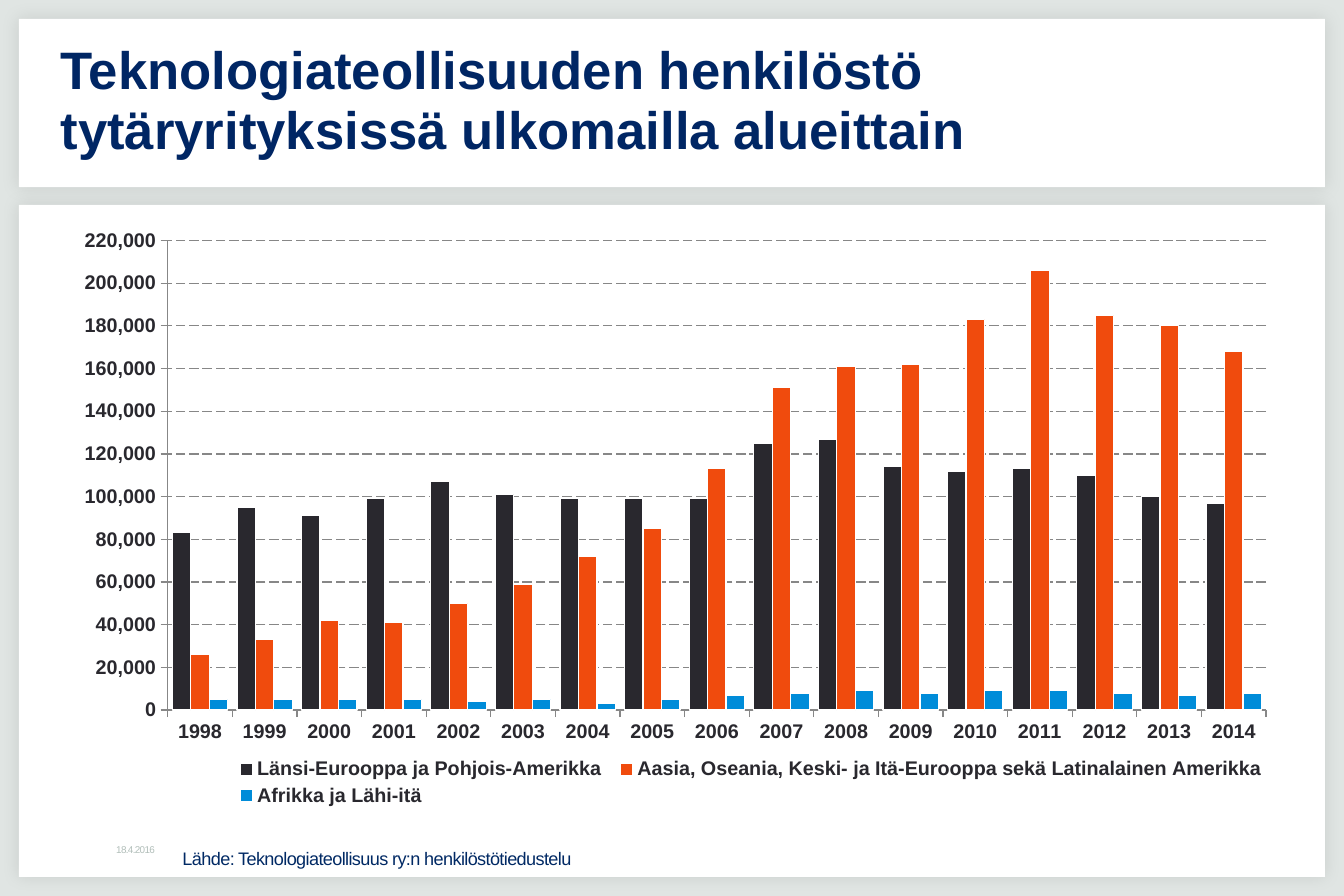
from lxml import etree
from pptx import Presentation
from pptx.chart.data import CategoryChartData
from pptx.dml.color import RGBColor
from pptx.enum.chart import XL_CHART_TYPE as ChartType, XL_LEGEND_POSITION as LegendPosition
from pptx.enum.chart import XL_TICK_MARK as TickMark
from pptx.enum.dml import MSO_LINE
from pptx.enum.shapes import MSO_SHAPE
from pptx.enum.text import MSO_ANCHOR, PP_ALIGN
from pptx.oxml import parse_xml
from pptx.oxml.ns import nsdecls, qn
from pptx.util import Inches, Pt

WIDTH, HEIGHT = 11.34, 7.56
MARGIN = 0.16
HEADER_BOX = (MARGIN, MARGIN, WIDTH - 2 * MARGIN, 1.42)
CONTENT_BOX = (MARGIN, 1.73, WIDTH - 2 * MARGIN, 5.67)
FONT = "Arial"
COLORS = {
    "background": "E0E5E3", "panel": "FFFFFF", "title": "002664", "source": "002964",
    "date": "B1BEB9", "text": "29282E", "line": "878787",
    "west": "29282E", "growth": "F04B0D", "africa": "008CD9",
}
YEARS = [str(year) for year in range(1998, 2015)]
# Personnel in thousands
REGIONS = [
    ("Länsi-Eurooppa ja Pohjois-Amerikka", "west",
     [83, 95, 91, 99, 107, 101, 99, 99, 99, 125, 127, 114, 112, 113, 110, 100, 97]),
    ("Aasia, Oseania, Keski- ja Itä-Eurooppa sekä Latinalainen Amerikka", "growth",
     [26, 33, 42, 41, 50, 59, 72, 85, 113, 151, 161, 162, 183, 206, 185, 180, 168]),
    ("Afrikka ja Lähi-itä", "africa",
     [5, 5, 5, 5, 4, 5, 3, 5, 7, 8, 9, 8, 9, 9, 8, 7, 8]),
]
PLOT_LAYOUT = (0.091, 0.028, 0.892, 0.799)
LEGEND_LAYOUT = (0.14, 0.9, 0.85, 0.12)


def color(name):
    return RGBColor.from_string(COLORS[name])


def inches(*lengths):
    return [Inches(length) for length in lengths]


def set_font(font, size, color_name, bold=False):
    font.name, font.size, font.bold = FONT, Pt(size), bold
    font.color.rgb = color(color_name)


def set_line(line, color_name):
    line.width = Pt(0.75)
    line.color.rgb = color(color_name)


def add_panel(slide, box):
    """Draw a white panel with a soft, even shadow."""
    panel = slide.shapes.add_shape(MSO_SHAPE.RECTANGLE, *inches(*box))
    panel.fill.solid()
    panel.fill.fore_color.rgb = color("panel")
    panel.line.fill.background()
    panel.shadow.inherit = False
    effects = panel._element.spPr.find(qn("a:effectLst"))
    effects.append(parse_xml(
        f'<a:outerShdw {nsdecls("a")} blurRad="{Pt(10)}" dist="0" dir="2700000">'
        '<a:srgbClr val="000000"><a:alpha val="10000"/></a:srgbClr></a:outerShdw>'))


def set_margins(frame, left, top, right, bottom):
    frame.margin_left, frame.margin_top, frame.margin_right, frame.margin_bottom = inches(
        left, top, right, bottom)


def add_header(slide, box):
    left, top, width, height = box
    add_panel(slide, box)
    title = slide.shapes.title
    title.left, title.top, title.width, title.height = inches(
        left + 0.31, top + 0.15, width - 0.62, height - 0.32)
    slide.shapes._spTree.append(title._element)
    frame = title.text_frame
    frame.text = "Teknologiateollisuuden henkilöstö tytäryrityksissä ulkomailla alueittain"
    frame.vertical_anchor = MSO_ANCHOR.MIDDLE
    set_margins(frame, 0.04, 0.05, 0.1, 0.05)
    paragraph = frame.paragraphs[0]
    paragraph.alignment = PP_ALIGN.LEFT
    paragraph.line_spacing = 0.95
    set_font(paragraph.font, 32, "title", bold=True)


def set_layout(element, shares, inner=False):
    """Fix the place of a plot area or legend as shares of the chart."""
    for layout in element.findall(qn("c:layout")):
        element.remove(layout)
    layout = etree.Element(qn("c:layout"))
    manual = etree.SubElement(layout, qn("c:manualLayout"))
    settings = [("layoutTarget", "inner")] if inner else []
    settings += [("xMode", "edge"), ("yMode", "edge"), *zip("xywh", shares)]
    for tag, value in settings:
        etree.SubElement(manual, qn(f"c:{tag}")).set("val", str(value))
    position = element.find(qn("c:legendPos"))
    if position is None:
        element.insert(0, layout)
    else:
        position.addnext(layout)


def format_axes(chart):
    for axis in (chart.category_axis, chart.value_axis):
        axis.major_tick_mark = TickMark.OUTSIDE
        axis.minor_tick_mark = TickMark.NONE
        set_line(axis.format.line, "line")
        set_font(axis.tick_labels.font, 12, "text", bold=True)
    values = chart.value_axis
    values.minimum_scale, values.maximum_scale, values.major_unit = 0, 220000, 20000
    values.tick_labels.number_format = "#,##0"
    values.tick_labels.number_format_is_linked = False
    values.has_major_gridlines = True
    gridline = values.major_gridlines.format.line
    set_line(gridline, "line")
    gridline.dash_style = MSO_LINE.LONG_DASH


def add_personnel_chart(slide, box):
    data = CategoryChartData(number_format="#,##0")
    data.categories = YEARS
    for name, _, thousands in REGIONS:
        data.add_series(name, [value * 1000 for value in thousands])
    chart = slide.shapes.add_chart(ChartType.COLUMN_CLUSTERED, *inches(*box), data).chart
    set_font(chart.font, 12, "text")
    chart.has_title = False
    plot = chart.plots[0]
    plot.gap_width, plot.overlap, plot.vary_by_categories = 50, 0, False
    for series, (_, color_name, _) in zip(plot.series, REGIONS):
        series.format.fill.solid()
        series.format.fill.fore_color.rgb = color(color_name)
        set_line(series.format.line, "panel")
    format_axes(chart)
    chart.has_legend = True
    chart.legend.position = LegendPosition.BOTTOM
    chart.legend.include_in_layout = False
    set_font(chart.legend.font, 12, "text", bold=True)
    set_layout(chart._chartSpace.chart.plotArea, PLOT_LAYOUT, inner=True)
    set_layout(chart.legend._element, LEGEND_LAYOUT)


def add_note(slide, box, text, size, color_name, anchor):
    frame = slide.shapes.add_textbox(*inches(*box)).text_frame
    frame.word_wrap = True
    frame.vertical_anchor = anchor
    set_margins(frame, 0.04, 0.04, 0.04, 0.04)
    paragraph = frame.paragraphs[0]
    run = paragraph.add_run()
    run.text = text
    set_font(paragraph.font, size, color_name)
    run._r.get_or_add_rPr().set("spc", "-40")


def add_content(slide, box):
    left, top, width, height = box
    bottom = top + height
    add_panel(slide, box)
    add_personnel_chart(slide, (left + 0.31, top + 0.16, width - 0.63, height - 0.71))
    add_note(slide, (left + 0.78, bottom - 0.31, 1.42, 0.16), "18.4.2016",
             6, "date", MSO_ANCHOR.MIDDLE)
    add_note(slide, (left + 1.34, bottom - 0.29, 5.67, 0.26),
             "Lähde: Teknologiateollisuus ry:n henkilöstötiedustelu",
             11, "source", MSO_ANCHOR.TOP)


def main():
    presentation = Presentation()
    presentation.slide_width, presentation.slide_height = inches(WIDTH, HEIGHT)
    title_only = presentation.slide_layouts.get_by_name("Title Only")
    slide = presentation.slides.add_slide(title_only)
    slide.background.fill.solid()
    slide.background.fill.fore_color.rgb = color("background")
    add_header(slide, HEADER_BOX)
    add_content(slide, CONTENT_BOX)
    presentation.save("out.pptx")


if __name__ == "__main__":
    main()
